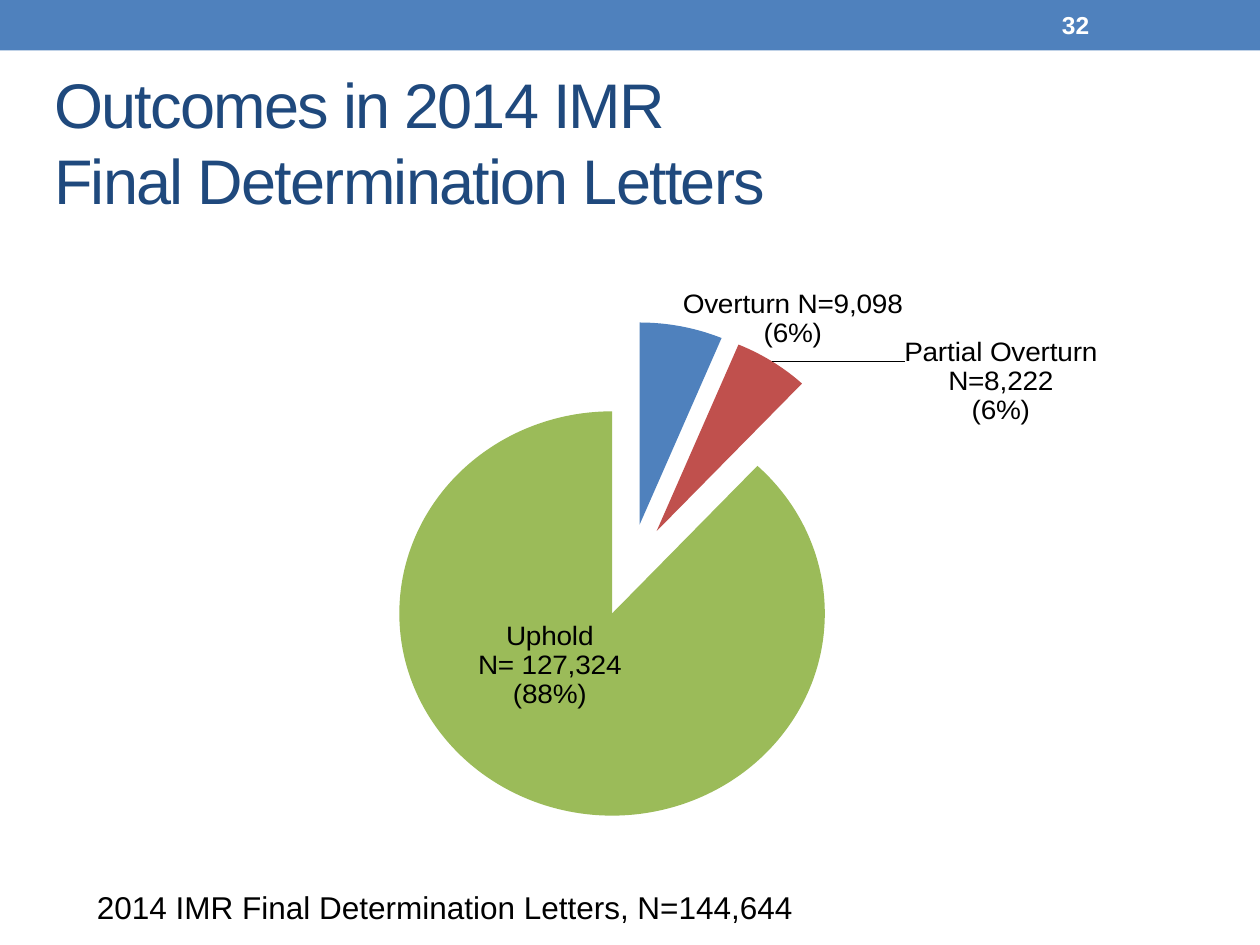
from lxml.etree import SubElement
from pptx import Presentation
from pptx.chart.data import CategoryChartData
from pptx.dml.color import RGBColor
from pptx.enum.chart import XL_CHART_TYPE, XL_LABEL_POSITION
from pptx.enum.shapes import MSO_SHAPE
from pptx.enum.text import MSO_ANCHOR, PP_ALIGN
from pptx.oxml.ns import qn
from pptx.util import Inches, Pt

COLORS = {"blue": "4F81BD", "red": "C0504D", "green": "9BBB59",
          "navy": "1F497D", "black": "000000", "white": "FFFFFF"}
FONT = "Arial"
TITLE = "Outcomes in 2014 IMR\vFinal Determination Letters"
PAGE_NUMBER = "32"
FOOTNOTE = "2014 IMR Final Determination Letters, N=144,644"
EXPLOSION = 23
NUMBER_FORMAT = "#,##0"
PLOT_LAYOUT = {"layoutTarget": "inner", "xMode": "edge", "yMode": "edge",
               "x": 0.11, "y": 0.06, "w": 0.79, "h": 0.94}
OUTSIDE, CENTER = XL_LABEL_POSITION.OUTSIDE_END, XL_LABEL_POSITION.CENTER
OUTCOMES = [
    ("Overturn", 9098, "blue", "Overturn N=9,098 (6%)", OUTSIDE, (0, 0.05), None),
    ("Partial Overturn", 8222, "red", "Partial Overturn N=8,222\n(6%)", OUTSIDE, (0.11, 0.13), None),
    ("Uphold", 127324, "green", "Uphold\nN= 127,324 (88%)", CENTER, (-0.02, -0.08), (0.22, 0.14)),
]
LABEL_EXTENSION = "{CE6537A1-D6FC-4f65-9D91-7224C49458BB}"
CHART_2012 = "http://schemas.microsoft.com/office/drawing/2012/chart"


def color(name):
    """Return the named palette colour."""
    return RGBColor.from_string(COLORS[name])


def set_font(font, size, color_name, bold=False):
    """Apply the slide's typeface to a font."""
    font.name, font.size, font.bold = FONT, Pt(size), bold
    font.color.rgb = color(color_name)


def add_text(slide, text, box, size, color_name, bold=False, anchor=MSO_ANCHOR.TOP):
    """Add a one-paragraph text box."""
    frame = slide.shapes.add_textbox(*map(Inches, box)).text_frame
    frame.word_wrap = True
    frame.vertical_anchor = anchor
    frame.text = text
    set_font(frame.paragraphs[0].font, size, color_name, bold)


def add_layout(parent, position, values):
    """Insert a manual chart layout at a child position."""
    for existing in parent.findall(qn("c:layout")):
        parent.remove(existing)
    layout = SubElement(parent, qn("c:layout"))
    parent.insert(position, layout)
    manual = SubElement(layout, qn("c:manualLayout"))
    for name, value in values.items():
        SubElement(manual, qn(f"c:{name}")).set("val", str(value))


def add_label_size(label, size):
    """Give a data label its own width and height."""
    extension = SubElement(SubElement(label, qn("c:extLst")), qn("c:ext"),
                           nsmap={"c15": CHART_2012}, uri=LABEL_EXTENSION)
    layout = SubElement(extension, f"{{{CHART_2012}}}layout")
    manual = SubElement(layout, qn("c:manualLayout"))
    for name, value in zip("wh", size):
        SubElement(manual, qn(f"c:{name}")).set("val", str(value))


def add_title(slide):
    """Fill and place the title."""
    title = slide.shapes.title
    title.left, title.top, title.width, title.height = map(Inches, (0.33, 0.58, 9.5, 1.08))
    frame = title.text_frame
    frame.text = TITLE
    frame.vertical_anchor = MSO_ANCHOR.MIDDLE
    paragraph = frame.paragraphs[0]
    paragraph.alignment = PP_ALIGN.LEFT
    set_font(paragraph.font, 36, "navy")
    for run in paragraph.runs:
        run.font._element.set("spc", "-100")


def add_pie(slide):
    """Add the exploded pie of outcomes with its labels."""
    data = CategoryChartData(number_format=NUMBER_FORMAT)
    data.categories = [outcome[0] for outcome in OUTCOMES]
    data.add_series("Series 1", [outcome[1] for outcome in OUTCOMES])
    box = map(Inches, (0.33, 2.08, 9.25, 4.42))
    chart = slide.shapes.add_chart(XL_CHART_TYPE.PIE, *box, data).chart
    chart.has_legend = chart.has_title = False
    set_font(chart.font, 16, "black", True)
    plot = chart.plots[0]
    plot.vary_by_categories = True
    add_layout(plot._element.getparent(), 0, PLOT_LAYOUT)
    series = plot.series[0]
    labels = series.data_labels
    labels.show_value = labels.show_percentage = labels.show_category_name = True
    labels.number_format, labels.number_format_is_linked = NUMBER_FORMAT, False
    for index, (_, _, fill, text, position, (x, y), size) in enumerate(OUTCOMES):
        point = series.points[index]
        point.format.fill.solid()
        point.format.fill.fore_color.rgb = color(fill)
        label = point.data_label
        label.text_frame.text = text
        for paragraph in label.text_frame.paragraphs:
            for run in paragraph.runs:
                set_font(run.font, 16, "black")
        label.position = position
        element = series._element.find(qn("c:dLbls")).findall(qn("c:dLbl"))[index]
        add_layout(element, 1, {"x": x, "y": y})
        for flag in ("showVal", "showCatName", "showPercent"):
            element.find(qn(f"c:{flag}")).set("val", "1")
        if size:
            add_label_size(element, size)
    explosion = SubElement(series._element, qn("c:explosion"))
    explosion.set("val", str(EXPLOSION))
    series._element.find(qn("c:dPt")).addprevious(explosion)


def main():
    """Build and save the slide."""
    presentation = Presentation()
    presentation.slide_width, presentation.slide_height = Inches(10), Inches(7.5)
    slide = presentation.slides.add_slide(presentation.slide_layouts[5])
    band = slide.shapes.add_shape(MSO_SHAPE.RECTANGLE, 0, 0, Inches(10), Inches(0.4))
    band.shadow.inherit = False
    band.fill.solid()
    band.fill.fore_color.rgb = color("blue")
    band.line.fill.background()
    add_title(slide)
    add_text(slide, PAGE_NUMBER, (8.33, 0.02, 1.17, 0.36), 14, "white", True, MSO_ANCHOR.MIDDLE)
    add_pie(slide)
    add_text(slide, FOOTNOTE, (0.67, 7, 7.25, 0.4), 18, "black")
    presentation.save("out.pptx")


if __name__ == "__main__":
    main()
